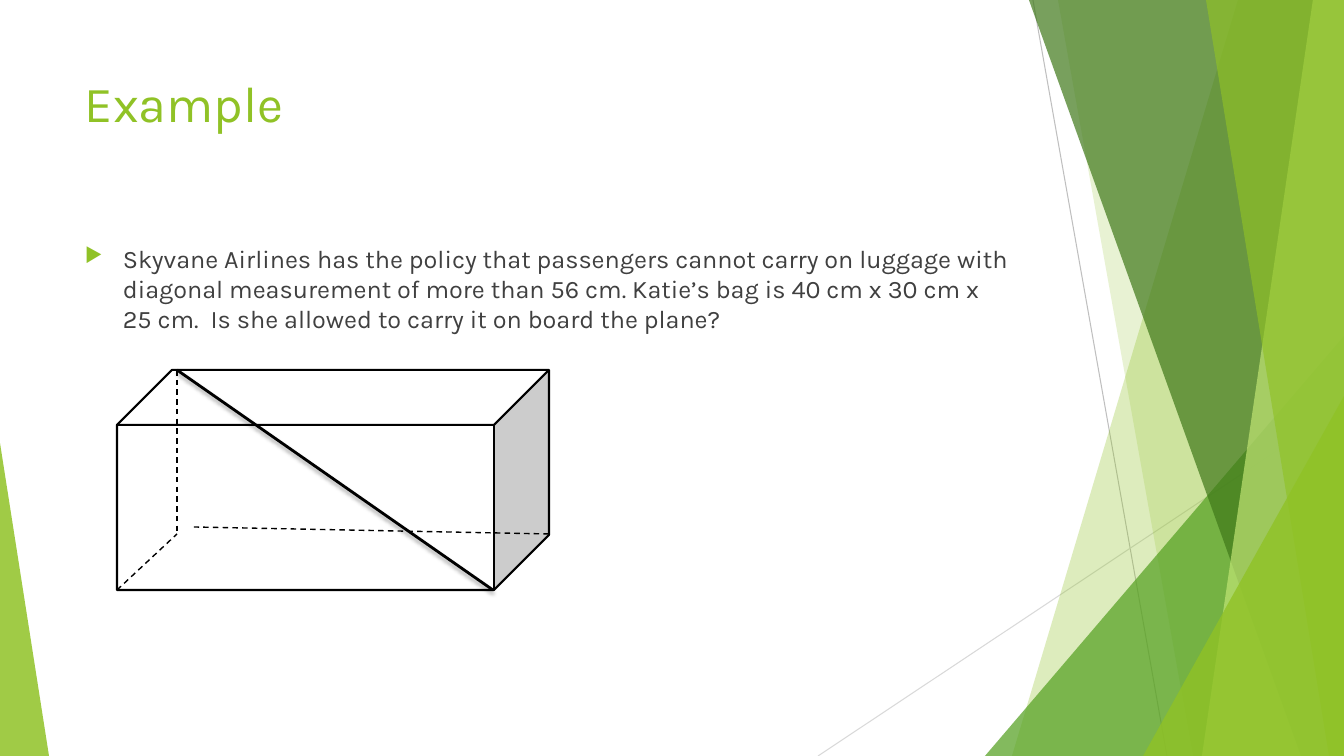
import pptx
import pptx.dml.color
import pptx.enum.dml
import pptx.enum.shapes
import pptx.oxml
import pptx.oxml.ns
import pptx.util
from lxml import etree

RGBColor = pptx.dml.color.RGBColor
Pt = pptx.util.Pt
qn = pptx.oxml.ns.qn
SHAPES = pptx.enum.shapes.MSO_SHAPE

PX = 914400 / 100.8
WIDTH, HEIGHT = 1344, 756
LIME = RGBColor(0x90, 0xC2, 0x26)
PALE_LIME = RGBColor(0xC0, 0xE4, 0x74)
GREEN = RGBColor(0x54, 0xA0, 0x21)
DARK_GREEN = RGBColor(0x3F, 0x78, 0x19)
GREY = RGBColor(0xBF, 0xBF, 0xBF)
LIGHT_GREY = RGBColor(0xD9, 0xD9, 0xD9)
TEXT_GREY = RGBColor(0x40, 0x40, 0x40)
BLACK = RGBColor(0, 0, 0)
WHITE = RGBColor(0xFF, 0xFF, 0xFF)


def emu(*lengths):
    """Turn px lengths into EMU."""
    return [round(length * PX) for length in lengths]


def add_line(ends, color, width, dashed=False):
    """Draw a straight line without shadow; return its empty effect list."""
    line = page.shapes.add_connector(pptx.enum.shapes.MSO_CONNECTOR.STRAIGHT, *emu(*ends))
    line.line.color.rgb = color
    line.line.width = Pt(width)
    if dashed:
        line.line.dash_style = pptx.enum.dml.MSO_LINE.DASH
    return etree.SubElement(line._element.spPr, qn("a:effectLst"))


deck = pptx.Presentation()
deck.slide_width, deck.slide_height = emu(WIDTH, HEIGHT)
page = deck.slides.add_slide(deck.slide_layouts[6])

# Thin background lines
add_line((1033, 0, 1167, HEIGHT), GREY, 0.75)
add_line((WIDTH, 406, 818, HEIGHT), LIGHT_GREY, 0.75)

# Translucent facets, back to front. A band runs from its top and bottom
# left corners to the right edge; a triangle has a box and an apex position.
facets = [
    ("band", (1238, 1012), LIME, 30),
    ("band", (1058, 1193), LIME, 20),
    ("triangle", (985, 336, 359, 420, 1), GREEN, 72),
    ("band", (1029, 1301), DARK_GREEN, 70),
    ("band", (1313, 1202), PALE_LIME, 70),
    ("band", (1206, 1329), LIME, 65),
    ("triangle", (1143, 396, 201, 360, 1), LIME, 80),
    ("triangle", (0, 443, 49, 313, 0), LIME, 85),
]
for kind, place, color, opacity in facets:
    if kind == "band":
        top_left, bottom_left = place
        outline = page.shapes.build_freeform(top_left, 0, scale=PX)
        outline.add_line_segments([(WIDTH, 0), (WIDTH, HEIGHT), (bottom_left, HEIGHT)])
        facet = outline.convert_to_shape()
    else:
        *bounds, apex = place
        facet = page.shapes.add_shape(SHAPES.ISOSCELES_TRIANGLE, *emu(*bounds))
        facet.adjustments[0] = apex
    facet.shadow.inherit = False
    facet.line.fill.background()
    facet.fill.solid()
    facet.fill.fore_color.rgb = color
    tint = facet._element.spPr.find(qn("a:solidFill"))[0]
    etree.SubElement(tint, qn("a:alpha"), val=str(opacity * 1000))

# Title and question
question = (
    "Skyvane Airlines has the policy that passengers cannot carry on luggage with "
    "diagonal measurement of more than 56 cm. Katie’s bag is 40 cm x 30 cm x 25 cm.  "
    "Is she allowed to carry it on board the plane?"
)
texts = [
    ("Example", (75, 67, 948, 145), {"size": Pt(36)}, LIME),
    (question, (75, 238, 948, 427), {"size": Pt(18)}, TEXT_GREY),
]
for text, bounds, font_format, color in texts:
    box = page.shapes.add_textbox(*emu(*bounds))
    box.text_frame.word_wrap = True
    para = box.text_frame.paragraphs[0]
    span = para.add_run()
    span.text = text
    span.font.color.rgb = color
    for name, value in {"name": "Karla", **font_format}.items():
        setattr(span.font, name, value)

# The question is the last paragraph written, and the only bulleted one
para.space_before = Pt(10)
bullet = para._p.get_or_add_pPr()
indent = emu(38)[0]
bullet.set("marL", str(indent))
bullet.set("indent", str(-indent))
bullet_color = etree.SubElement(bullet, qn("a:buClr"))
etree.SubElement(bullet_color, qn("a:srgbClr"), val=str(LIME))
etree.SubElement(bullet, qn("a:buSzPct"), val="80000")
etree.SubElement(bullet, qn("a:buChar"), char="▶")

# Bag with hidden edges and diagonal
bag = page.shapes.add_shape(SHAPES.CUBE, *emu(117, 370, 432, 220))
bag.shadow.inherit = False
bag.fill.solid()
bag.fill.fore_color.rgb = WHITE
bag.line.color.rgb = BLACK
bag.line.width = Pt(1.5)

hidden_edges = [(117, 590, 177, 534), (549, 534, 194, 527), (177, 370, 177, 535)]
for edge in hidden_edges:
    add_line(edge, BLACK, 1, dashed=True)

effects = add_line((177, 370, 493, 590), BLACK, 2)
shadow = etree.SubElement(
    effects, qn("a:outerShdw"), blurRad=str(Pt(3)), dist=str(Pt(2)),
    dir=str(90 * 60000), rotWithShape="0",
)
shadow_color = etree.SubElement(shadow, qn("a:srgbClr"), val=str(BLACK))
etree.SubElement(shadow_color, qn("a:alpha"), val="35000")

deck.save("out.pptx")
